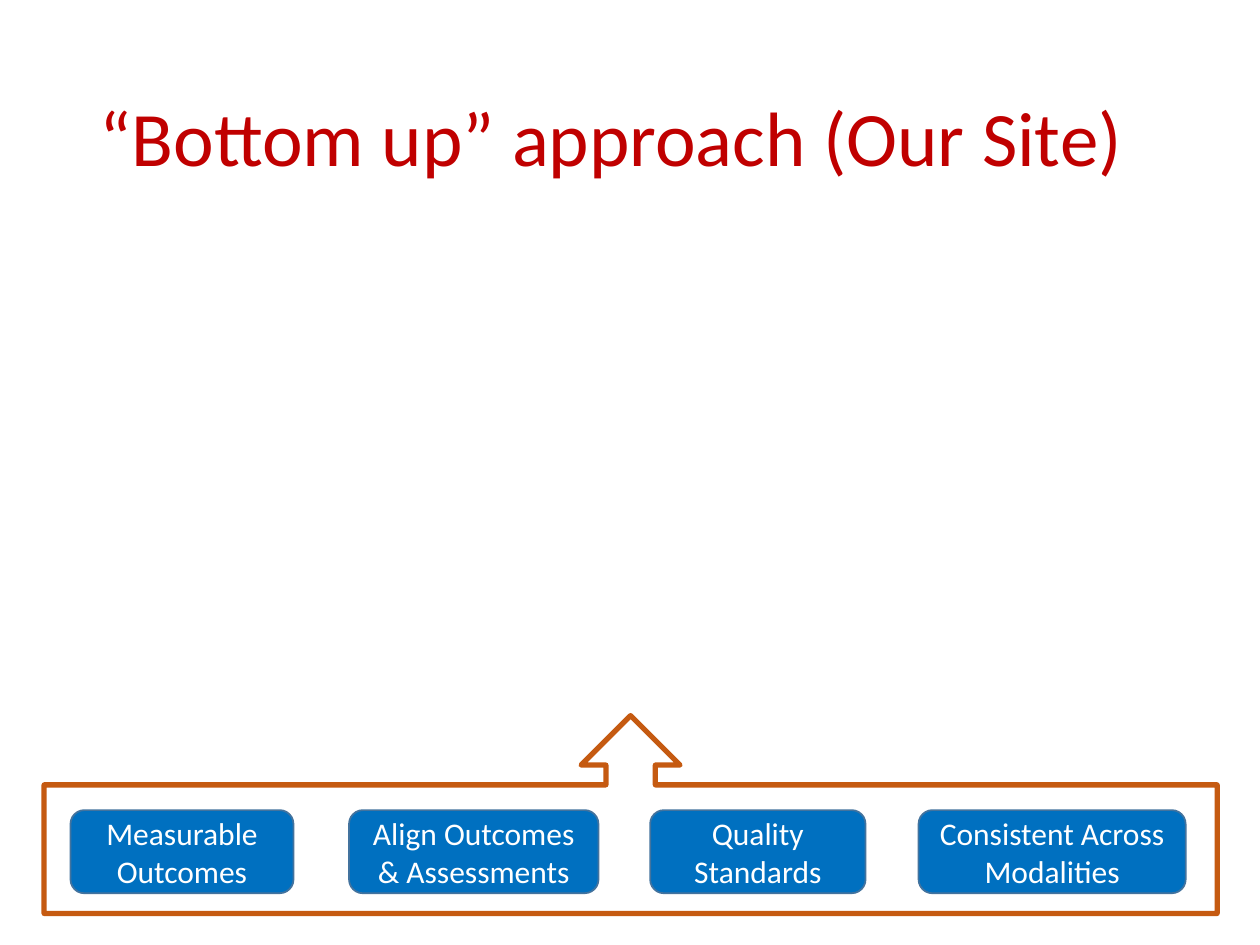
from pptx import Presentation
from pptx.dml.color import RGBColor
from pptx.enum.shapes import MSO_SHAPE as Shape
from pptx.enum.text import MSO_ANCHOR as Anchor, PP_ALIGN as Align
from pptx.util import Inches, Pt

COLORS = {
    "title": "C00000",
    "callout": "C55A11",
    "box": "0070C0",
    "box_line": "43739E",
    "box_text": "FFFFFF",
}
FONT = "Calibri"


def color(name):
    return RGBColor.from_string(COLORS[name])


def format_text(shape, size, color_name, alignment):
    shape.text_frame.word_wrap = True
    shape.text_frame.vertical_anchor = Anchor.MIDDLE
    for paragraph in shape.text_frame.paragraphs:
        paragraph.alignment = alignment
        for run in paragraph.runs:
            run.font.name = FONT
            run.font.size = Pt(size)
            run.font.color.rgb = color(color_name)


presentation = Presentation()
presentation.slide_width = Inches(10)
presentation.slide_height = Inches(7.5)
slide = presentation.slides.add_slide(presentation.slide_layouts[5])

# Title
title = slide.shapes.title
title.left, title.top = Inches(0.69), Inches(0.4)
title.width, title.height = Inches(8.84), Inches(1.45)
title.text_frame.text = "“Bottom up” approach (Our Site)"
title.text_frame.paragraphs[0].line_spacing = 0.9
format_text(title, 44, "title", Align.LEFT)

# Callout pointing up from the foundation row
callout = slide.shapes.add_shape(
    Shape.UP_ARROW_CALLOUT, Inches(0.35), Inches(5.68), Inches(9.31), Inches(1.57)
)
callout.shadow.inherit = False
callout.fill.background()
callout.line.color.rgb = color("callout")
callout.line.width = Pt(3)

# Foundation row: label, left, width
row_top, row_height = 6.43, 0.66
foundations = [
    ("Measurable Outcomes", 0.56, 1.77),
    ("Align Outcomes & Assessments", 2.77, 1.98),
    ("Quality Standards", 5.16, 1.71),
    ("Consistent Across Modalities", 7.29, 2.12),
]
for label, left, width in foundations:
    box = slide.shapes.add_shape(
        Shape.ROUNDED_RECTANGLE,
        Inches(left), Inches(row_top), Inches(width), Inches(row_height),
    )
    box.shadow.inherit = False
    box.fill.solid()
    box.fill.fore_color.rgb = color("box")
    box.line.color.rgb = color("box_line")
    box.line.width = Pt(1)
    box.text_frame.text = label
    format_text(box, 18, "box_text", Align.CENTER)

presentation.save("out.pptx")
